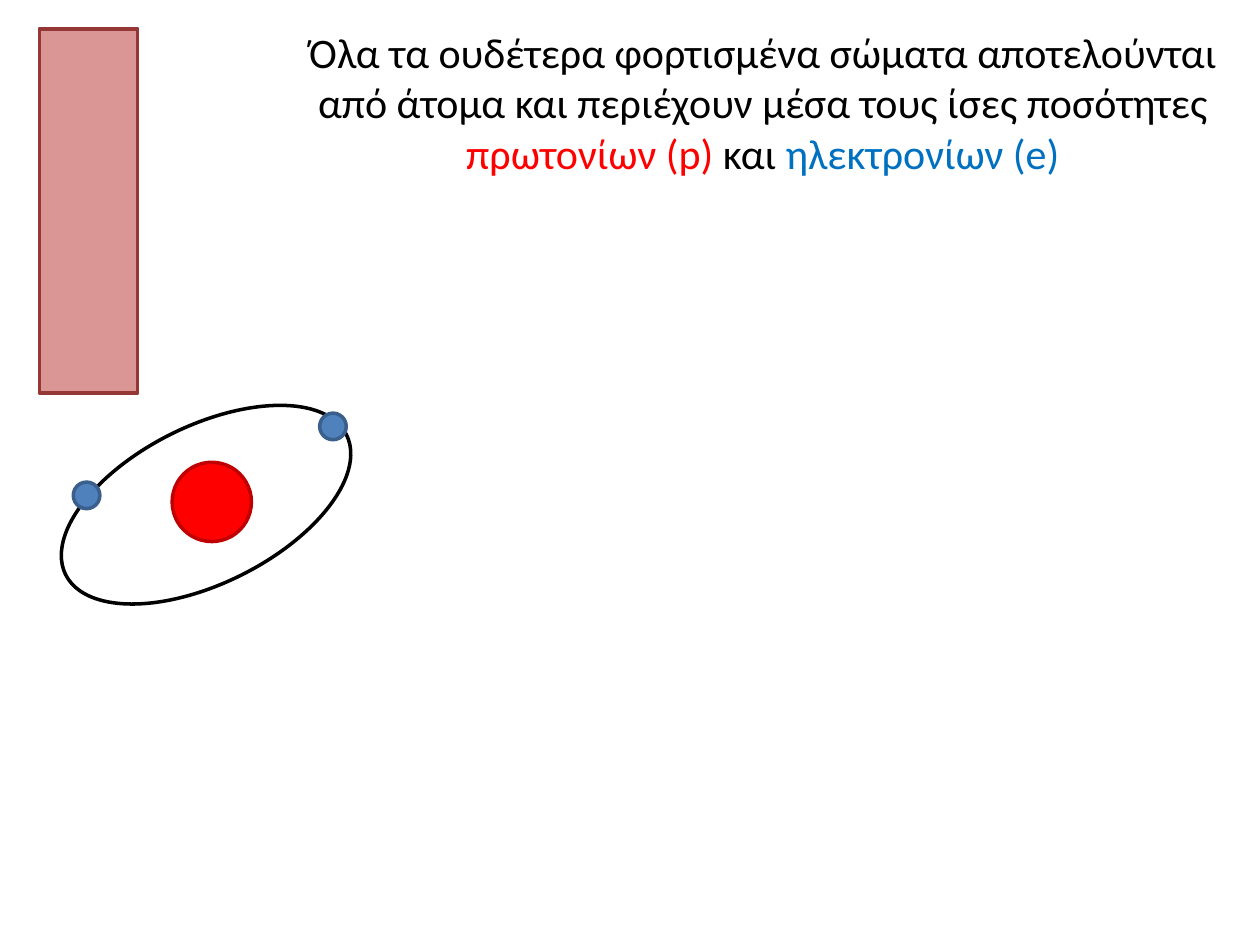
from pptx import Presentation
from pptx.dml.color import RGBColor
from pptx.enum.shapes import MSO_SHAPE
from pptx.enum.text import MSO_AUTO_SIZE, PP_ALIGN
from pptx.util import Pt

RECT, OVAL = MSO_SHAPE.RECTANGLE, MSO_SHAPE.OVAL
CENTER = PP_ALIGN.CENTER
FIT = MSO_AUTO_SIZE.SHAPE_TO_FIT_TEXT

COLORS = {
    "black": "000000", "red": "FF0000", "blue": "0070C0",
    "rod": "D99694", "rod edge": "953735", "red edge": "C00000",
    "electron": "4F81BD", "electron edge": "3A5F8C",
}
TEXT = [
    ("Όλα τα ουδέτερα φορτισμένα σώματα αποτελούνται από άτομα "
     "και περιέχουν μέσα τους ίσες ποσότητες ", "black"),
    ("πρωτονίων (p)", "red"),
    (" και ", "black"),
    ("ηλεκτρονίων (e)", "blue"),
]
TEXT_BOX = (151.92, 11.52, 568.08, 94.32)

# shape, (left, top, width, height), fill, line, rotation
ROD = (RECT, (22.5, 16.5, 56.2, 208), "rod", "rod edge", 0)
SIZE = 15.2
ATOM = [
    (OVAL, (98.4, 264.2, 45.3, 45.3), "red", "red edge", 0),
    (OVAL, (28.1, 243.4, 179.3, 90), None, "black", 333.5),
] + [
    (OVAL, (left, top, SIZE, SIZE), "electron", "electron edge", 0)
    for left, top in [(41.9, 275.5), (182.7, 236.1)]
]


def color(name):
    return RGBColor.from_string(COLORS[name])


def draw(shapes, kind, box, fill, line, turn):
    shape = shapes.add_shape(kind, *map(Pt, box))
    shape.shadow.inherit = False
    shape.rotation = turn
    if fill:
        shape.fill.solid()
        shape.fill.fore_color.rgb = color(fill)
    else:
        shape.fill.background()
    shape.line.color.rgb = color(line)
    shape.line.width = Pt(2)


def write(shapes):
    frame = shapes.add_textbox(*map(Pt, TEXT_BOX)).text_frame
    frame.word_wrap = True
    frame.auto_size = FIT
    para = frame.paragraphs[0]
    para.alignment = CENTER
    for words, tint in TEXT:
        run = para.add_run()
        run.text = words
        run.font.name = "Calibri"
        run.font.size = Pt(24)
        run.font.color.rgb = color(tint)


def main():
    deck = Presentation()
    deck.slide_width, deck.slide_height = Pt(720), Pt(540)
    slide = deck.slides.add_slide(deck.slide_layouts[6])
    write(slide.shapes)
    draw(slide.shapes, *ROD)
    atom = slide.shapes.add_group_shape()
    for part in ATOM:
        draw(atom.shapes, *part)
    deck.save("out.pptx")


if __name__ == "__main__":
    main()
